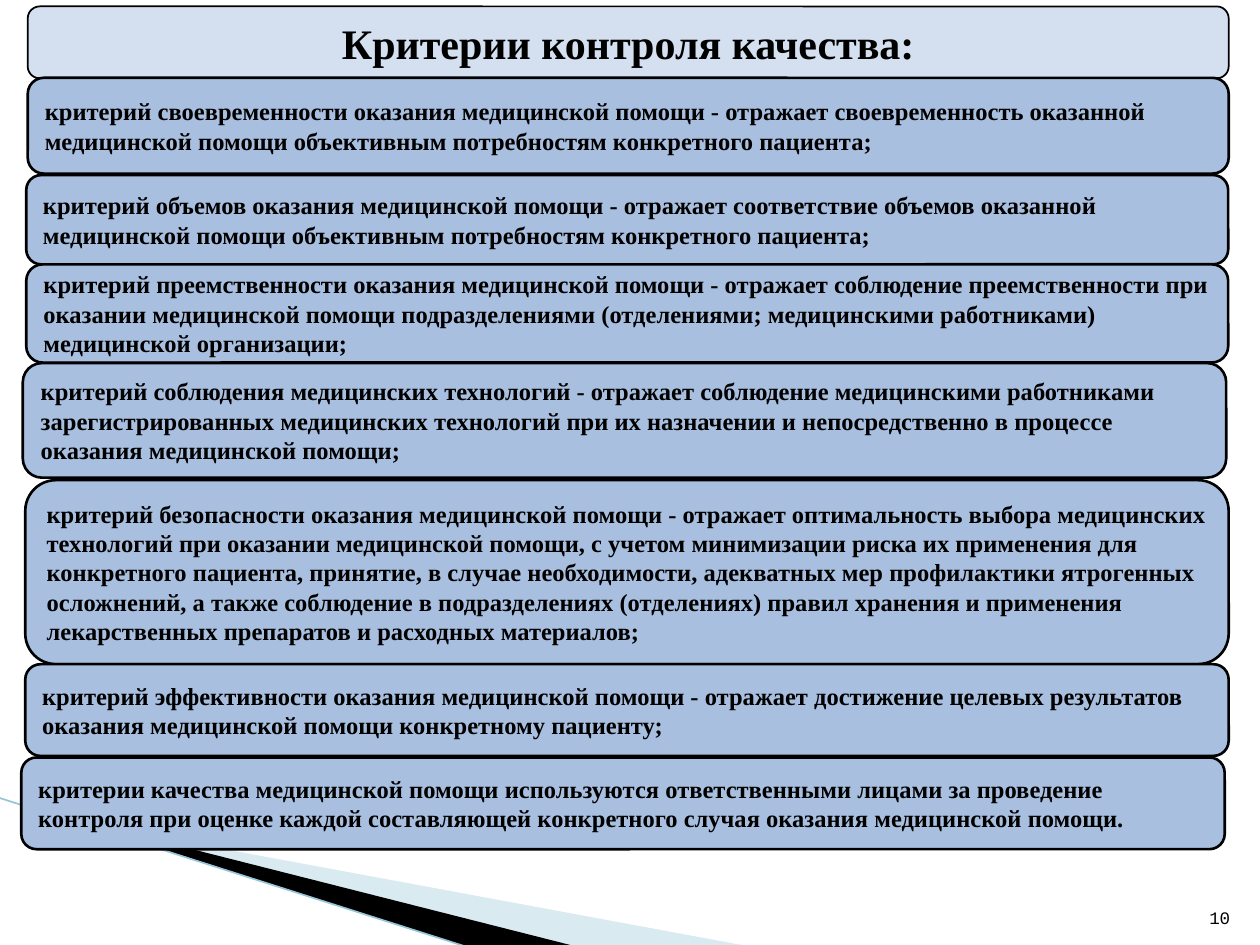
from pptx import Presentation
from pptx.dml.color import RGBColor
from pptx.enum.shapes import MSO_CONNECTOR, MSO_SHAPE
from pptx.enum.text import MSO_ANCHOR, PP_ALIGN
from pptx.oxml.ns import qn
from pptx.util import Cm, Pt
from lxml.etree import SubElement

BLACK = RGBColor(0x00, 0x00, 0x00)
HEADING_BLUE = RGBColor(0xD4, 0xDF, 0xEF)
CRITERION_BLUE = RGBColor(0xA8, 0xBF, 0xDF)
WEDGE_BLUE = RGBColor(0xA0, 0xCB, 0xDC)
EDGE_BLUE = RGBColor(0x97, 0xC5, 0xD8)
SERIF = "Times New Roman"

HEADING = "Критерии контроля качества:"
HEADING_BOX = (0.56, 0.13, 24.21, 1.45)

CRITERIA = [
    (0.56, 1.57, 24.21, 1.93,
     "критерий своевременности оказания медицинской помощи - отражает своевременность "
     "оказанной медицинской помощи объективным потребностям конкретного пациента;"),
    (0.53, 3.53, 24.23, 1.8,
     "критерий объемов оказания медицинской помощи - отражает соответствие объемов "
     "оказанной медицинской помощи объективным потребностям конкретного пациента;"),
    (0.53, 5.33, 24.23, 1.98,
     "критерий преемственности оказания медицинской помощи - отражает соблюдение "
     "преемственности при оказании медицинской помощи подразделениями (отделениями; "
     "медицинскими работниками) медицинской организации;"),
    (0.46, 7.32, 24.26, 2.31,
     "критерий соблюдения медицинских технологий - отражает соблюдение медицинскими "
     "работниками зарегистрированных медицинских технологий при их назначении и "
     "непосредственно в процессе оказания медицинской помощи;"),
    (0.51, 9.68, 24.26, 3.71,
     "критерий безопасности оказания медицинской помощи - отражает оптимальность выбора "
     "медицинских технологий при оказании медицинской помощи, с учетом минимизации риска "
     "их применения для конкретного пациента, принятие, в случае необходимости, адекватных "
     "мер профилактики ятрогенных осложнений, а также соблюдение в подразделениях "
     "(отделениях) правил хранения и применения лекарственных препаратов и расходных "
     "материалов;"),
    (0.51, 13.39, 24.26, 1.85,
     "критерий эффективности оказания медицинской помощи - отражает достижение целевых "
     "результатов оказания медицинской помощи конкретному пациенту;"),
    (0.43, 15.27, 24.26, 1.85,
     "критерии качества медицинской помощи используются ответственными лицами за "
     "проведение контроля при оценке каждой составляющей конкретного случая оказания "
     "медицинской помощи."),
]

WEDGES = [
    (WEDGE_BLUE, 40, [(1.4, 16.54), (15.11, 19.08), (11.58, 19.08), (1.4, 16.51)]),
    (BLACK, 100, [(1.35, 16.48), (11.61, 19.08), (9.45, 19.1), (1.37, 16.51)]),
]
EDGE = (-0.03, 16.08, 9.45, 19.1)

PAGE_NUMBER = "10"
PAGE_NUMBER_BOX = (24.03, 17.81, 1.02, 1.02)


def to_cm(values):
    return [Cm(value) for value in values]


def write(shape, text, size, font=SERIF, bold=True, align=PP_ALIGN.LEFT,
          anchor=MSO_ANCHOR.MIDDLE):
    frame = shape.text_frame
    frame.text = text
    frame.word_wrap = True
    frame.vertical_anchor = anchor
    paragraph = frame.paragraphs[0]
    paragraph.alignment = align
    for run in paragraph.runs:
        run.font.name = font
        run.font.size = Pt(size)
        run.font.bold = bold
        run.font.color.rgb = BLACK


def add_bar(shapes, box, color, line_width):
    bar = shapes.add_shape(MSO_SHAPE.ROUNDED_RECTANGLE, *to_cm(box))
    bar.shadow.inherit = False
    bar.fill.solid()
    bar.fill.fore_color.rgb = color
    bar.line.color.rgb = BLACK
    bar.line.width = Pt(line_width)
    return bar


def add_wedge(shapes, color, opacity, points):
    corners = [to_cm(point) for point in points]
    builder = shapes.build_freeform(*corners[0])
    builder.add_line_segments(corners[1:], close=True)
    wedge = builder.convert_to_shape()
    wedge.shadow.inherit = False
    wedge.line.fill.background()
    wedge.fill.solid()
    wedge.fill.fore_color.rgb = color
    if opacity < 100:
        fill_color = wedge._element.spPr.find(qn("a:solidFill"))[0]
        SubElement(fill_color, qn("a:alpha")).set("val", str(opacity * 1000))


def add_edge(shapes):
    edge = shapes.add_connector(MSO_CONNECTOR.STRAIGHT, *to_cm(EDGE))
    edge.line.color.rgb = EDGE_BLUE
    edge.line.width = Pt(0.95)
    SubElement(edge._element.spPr, qn("a:effectLst"))


def main():
    deck = Presentation()
    deck.slide_width, deck.slide_height = Cm(25.4), Cm(19.05)
    slide = deck.slides.add_slide(deck.slide_layouts[5])
    shapes = slide.shapes

    for wedge in WEDGES:
        add_wedge(shapes, *wedge)
    add_edge(shapes)

    add_bar(shapes, HEADING_BOX, HEADING_BLUE, 1)
    heading = shapes.title
    heading.left, heading.top, heading.width, heading.height = to_cm(HEADING_BOX)
    write(heading, HEADING, 24, align=PP_ALIGN.CENTER)
    shapes._spTree.append(heading._element)

    for *box, text in CRITERIA:
        write(add_bar(shapes, box, CRITERION_BLUE, 1.5), text, 14)

    page_number = shapes.add_textbox(*to_cm(PAGE_NUMBER_BOX))
    write(page_number, PAGE_NUMBER, 10, font="Courier New", bold=False,
          align=PP_ALIGN.RIGHT, anchor=MSO_ANCHOR.BOTTOM)

    deck.save("out.pptx")


if __name__ == "__main__":
    main()
